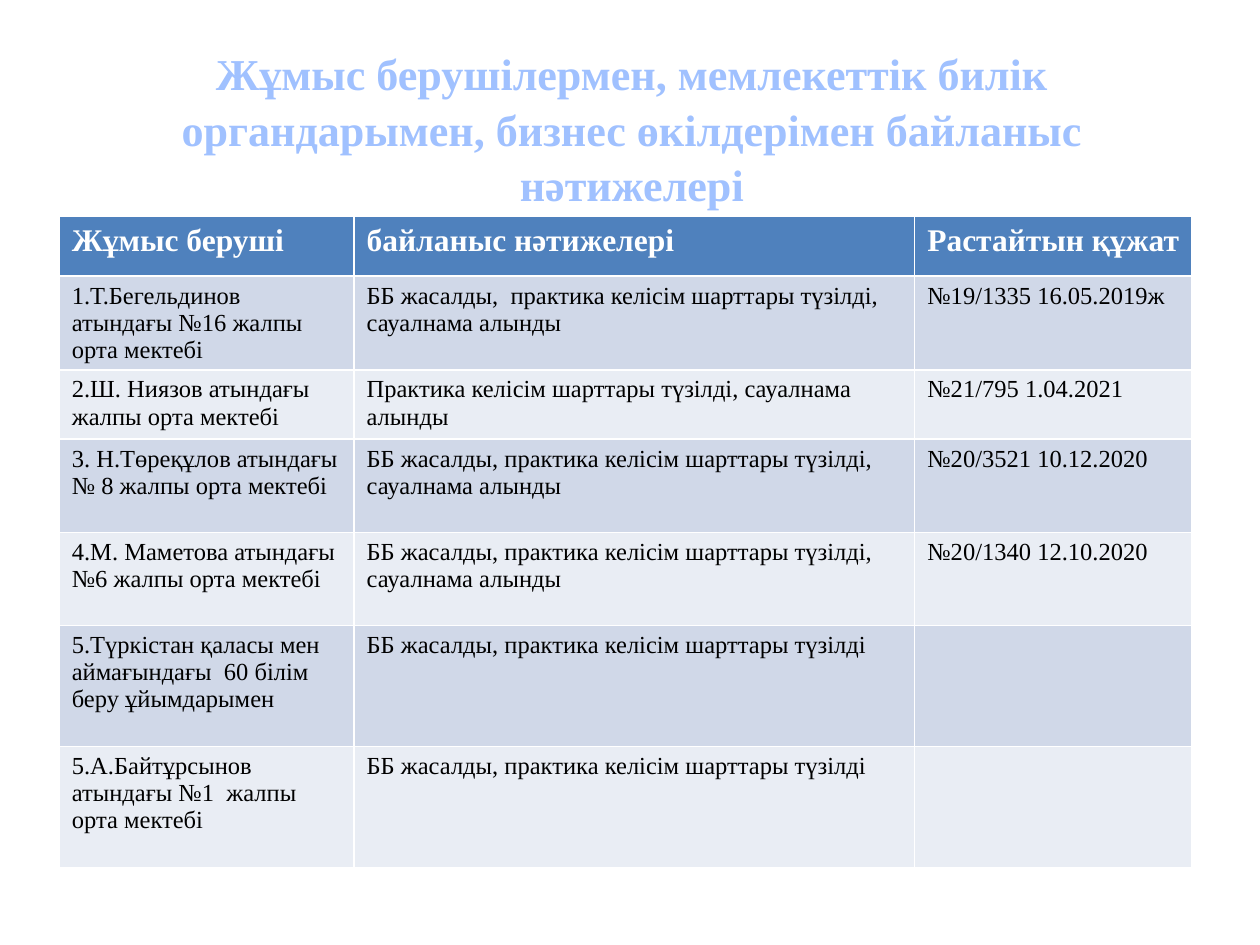
"""Build a slide with a table of results of work with employers."""
import dataclasses

import pptx
import pptx.dml.color
import pptx.enum.text
import pptx.slide
import pptx.table
import pptx.text.text
import pptx.util

Inches = pptx.util.Inches
FONT = "Times New Roman"
COLORS = {
    "title": "A0C1FF",
    "header": "4F81BD",
    "odd": "D0D8E8",
    "even": "E9EDF4",
    "white": "FFFFFF",
    "black": "000000",
}
TITLE = ("Жұмыс берушілермен, мемлекеттік билік органдарымен, "
         "бизнес өкілдерімен байланыс нәтижелері")
COLUMN_WIDTHS = (2.34, 4.45, 2.2)
AGREEMENTS = "ББ жасалды, практика келісім шарттары түзілді"


@dataclasses.dataclass(frozen=True)
class Row:
    height: float
    employer: str
    result: str
    document: str = ""


HEADER = Row(0.47, "Жұмыс беруші", "байланыс нәтижелері", "Растайтын құжат")
ROWS = (
    Row(0.74, "1.Т.Бегельдинов атындағы №16 жалпы орта мектебі",
        "ББ жасалды,  практика келісім шарттары түзілді, сауалнама алынды",
        "№19/1335 16.05.2019ж"),
    Row(0.55, "2.Ш. Ниязов атындағы жалпы орта мектебі",
        "Практика келісім шарттары түзілді, сауалнама алынды",
        "№21/795 1.04.2021"),
    Row(0.74, "3. Н.Төреқұлов атындағы\n№ 8 жалпы орта мектебі",
        AGREEMENTS + ",\nсауалнама алынды", "№20/3521 10.12.2020"),
    Row(0.74, "4.М. Маметова атындағы №6 жалпы орта мектебі",
        AGREEMENTS + ", сауалнама алынды", "№20/1340 12.10.2020"),
    Row(0.96, "5.Түркістан қаласы мен аймағындағы  60 білім беру ұйымдарымен",
        AGREEMENTS),
    Row(0.96, "5.А.Байтұрсынов атындағы №1  жалпы орта мектебі", AGREEMENTS),
)


def rgb(name: str) -> pptx.dml.color.RGBColor:
    return pptx.dml.color.RGBColor.from_string(COLORS[name])


def write(tf: pptx.text.text.TextFrame, text: str, *, size: float, color: str,
          bold: bool = False, align=None, spacing=None) -> None:
    for i, line in enumerate(text.split("\n")):
        p = tf.add_paragraph() if i else tf.paragraphs[0]
        p.alignment = align
        p.line_spacing = spacing
        r = p.add_run()
        r.text = line
        r.font.name = FONT
        r.font.size = pptx.util.Pt(size)
        r.font.bold = bold
        r.font.color.rgb = rgb(color)


def draw_title(slide: pptx.slide.Slide) -> None:
    sp = slide.shapes.title
    sp.left, sp.top = Inches(0.5), Inches(0.3)
    sp.width, sp.height = Inches(9.03), Inches(1.42)
    tf = sp.text_frame
    tf.word_wrap = True
    tf.vertical_anchor = pptx.enum.text.MSO_ANCHOR.MIDDLE
    write(tf, TITLE, size=25.2, color="title", bold=True,
          align=pptx.enum.text.PP_ALIGN.CENTER, spacing=1.05)


def fill_row(table: pptx.table.Table, index: int, row: Row, *, fill: str,
             size: float, color: str, bold: bool = False) -> None:
    table.rows[index].height = Inches(row.height)
    texts = (row.employer, row.result, row.document)
    for cell, text in zip(table.rows[index].cells, texts):
        cell.fill.solid()
        cell.fill.fore_color.rgb = rgb(fill)
        write(cell.text_frame, text, size=size, color=color, bold=bold)


def draw_table(slide: pptx.slide.Slide) -> None:
    height = HEADER.height + sum(row.height for row in ROWS)
    table = slide.shapes.add_table(
        len(ROWS) + 1, len(COLUMN_WIDTHS), Inches(0.47), Inches(1.72),
        Inches(sum(COLUMN_WIDTHS)), Inches(height)).table
    for column, width in zip(table.columns, COLUMN_WIDTHS):
        column.width = Inches(width)
    fill_row(table, 0, HEADER, fill="header", size=18, color="white", bold=True)
    for i, row in enumerate(ROWS, start=1):
        fill_row(table, i, row, fill="odd" if i % 2 else "even",
                 size=14, color="black")


def main() -> None:
    prs = pptx.Presentation()
    prs.slide_width, prs.slide_height = Inches(10), Inches(7.5)
    slide = prs.slides.add_slide(prs.slide_layouts.get_by_name("Title Only"))
    draw_title(slide)
    draw_table(slide)
    prs.save("out.pptx")


if __name__ == "__main__":
    main()
